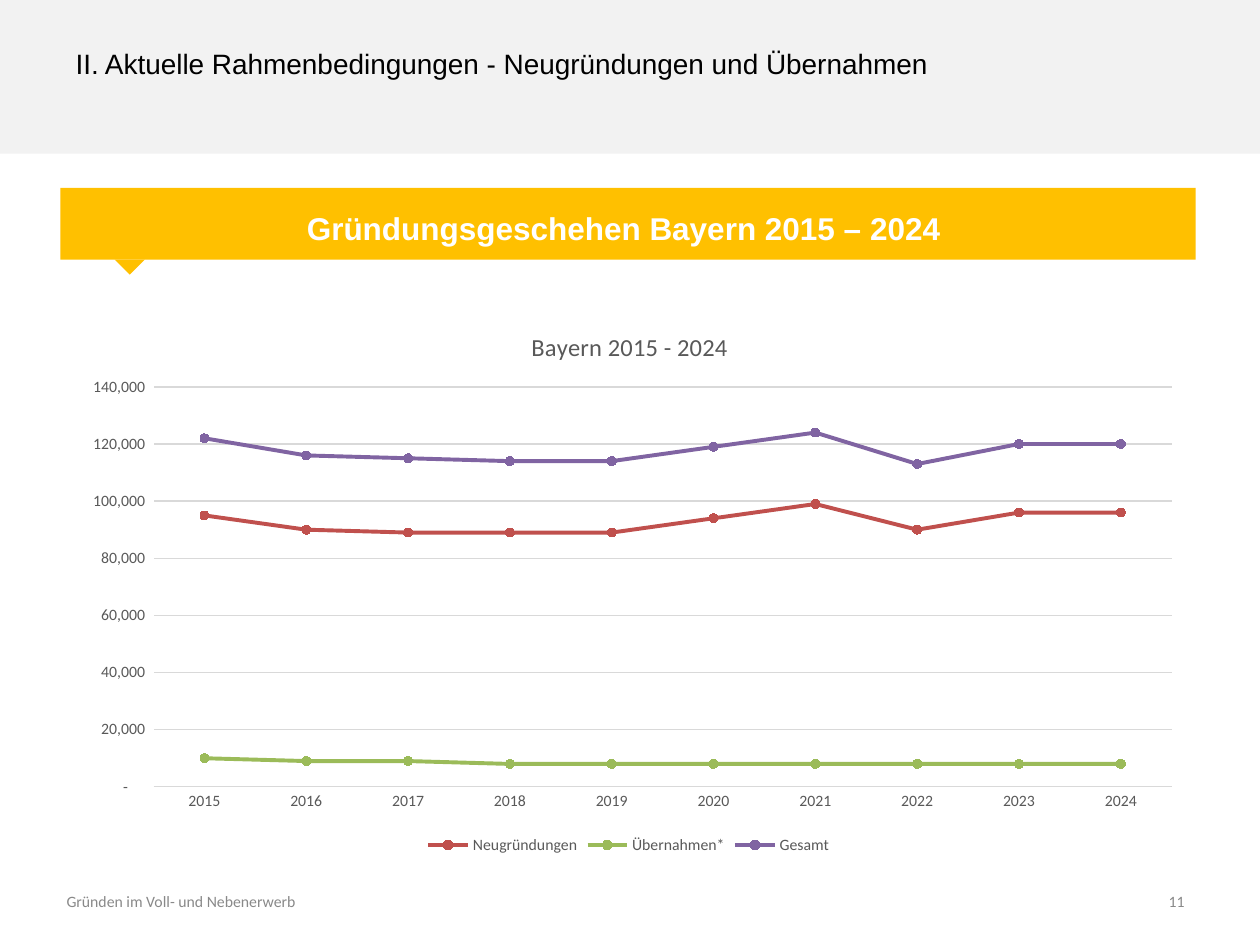
import dataclasses

import pptx
import pptx.chart.data
import pptx.dml.color
import pptx.enum.chart
import pptx.enum.shapes
import pptx.enum.text
import pptx.oxml
import pptx.oxml.ns
import pptx.util

Inches = pptx.util.Inches
Pt = pptx.util.Pt
ALIGN = pptx.enum.text.PP_ALIGN
ANCHOR = pptx.enum.text.MSO_ANCHOR
SHAPE = pptx.enum.shapes.MSO_SHAPE

COLORS = {
    "band": "F2F2F2", "gold": "FFC000", "white": "FFFFFF", "black": "000000",
    "foot": "898989", "label": "595959", "grid": "D9D9D9",
    "red": "C0504D", "green": "9BBB59", "violet": "8064A2",
}


@dataclasses.dataclass
class Box:
    left: float
    top: float
    width: float
    height: float

    def sizes(self):
        return [Inches(n) for n in dataclasses.astuple(self)]


@dataclasses.dataclass
class Line:
    name: str
    color: str
    vals: list  # in thousands


YEARS = [str(year) for year in range(2015, 2025)]
LINES = [
    Line("Neugründungen", "red", [95, 90, 89, 89, 89, 94, 99, 90, 96, 96]),
    Line("Übernahmen*", "green", [10, 9, 9, 8, 8, 8, 8, 8, 8, 8]),
    Line("Gesamt", "violet", [122, 116, 115, 114, 114, 119, 124, 113, 120, 120]),
]


def rgb(name: str):
    return pptx.dml.color.RGBColor.from_string(COLORS[name])


def place(shape, box: Box):
    shape.left, shape.top, shape.width, shape.height = box.sizes()


def style(font, size, color, face="Calibri", bold=False):
    font.size, font.name, font.bold = Pt(size), face, bold
    font.color.rgb = rgb(color)


def write(shape, text: str, *, size, color, face="Calibri", bold=False,
          align=ALIGN.LEFT, anchor=ANCHOR.TOP, spacing=1.0):
    frame = shape.text_frame
    frame.word_wrap = True
    frame.auto_size = pptx.enum.text.MSO_AUTO_SIZE.NONE
    frame.vertical_anchor = anchor
    frame.text = text
    para = frame.paragraphs[0]
    para.alignment, para.line_spacing = align, spacing
    para.space_before = Pt(0)
    style(para.runs[0].font, size, color, face, bold)
    return para


def draw(slide, kind, box: Box, color: str):
    shape = slide.shapes.add_shape(kind, *box.sizes())
    shape.shadow.inherit = False
    shape.fill.solid()
    shape.fill.fore_color.rgb = rgb(color)
    shape.line.fill.background()
    return shape


def label(slide, box: Box, text: str, **form):
    return write(slide.shapes.add_textbox(*box.sizes()), text, **form)


def layout(part, **spots):
    """Fix a chart part at fractions of the chart area."""
    old = part.find(pptx.oxml.ns.qn("c:layout"))
    if old is not None:
        part.remove(old)
    modes = {"xMode": "edge", "yMode": "edge"}
    if "w" in spots:
        modes = {"layoutTarget": "inner", **modes}
    tags = "".join(f'<c:{key} val="{val}"/>' for key, val in {**modes, **spots}.items())
    return pptx.oxml.parse_xml(
        f'<c:layout {pptx.oxml.ns.nsdecls("c")}><c:manualLayout>{tags}'
        "</c:manualLayout></c:layout>")


def plot(slide, box: Box):
    data = pptx.chart.data.CategoryChartData()
    data.categories = YEARS
    for line in LINES:
        data.add_series(line.name, [val * 1000 for val in line.vals])
    kind = pptx.enum.chart.XL_CHART_TYPE.LINE_MARKERS
    chart = slide.shapes.add_chart(kind, *box.sizes(), data).chart
    style(chart.font, 10, "black")

    # Chart title
    chart.has_title = True
    frame = chart.chart_title.text_frame
    frame.text = "Bayern 2015 - 2024"
    style(frame.paragraphs[0].runs[0].font, 14, "label")
    title = chart.chart_title._element
    spot = layout(title, x=0.41, y=0.04)
    title.find(pptx.oxml.ns.qn("c:tx")).addnext(spot)

    # Plot area and legend
    area = chart._chartSpace.chart.plotArea
    area.insert(0, layout(area, x=0.08, y=0.15, w=0.9, h=0.72))
    chart.has_legend = True
    chart.legend.position = pptx.enum.chart.XL_LEGEND_POSITION.BOTTOM
    chart.legend.include_in_layout = False
    style(chart.legend.font, 9, "label")

    # Axes
    cat, val = chart.category_axis, chart.value_axis
    for axis in (cat, val):
        axis.major_tick_mark = axis.minor_tick_mark = pptx.enum.chart.XL_TICK_MARK.NONE
        style(axis.tick_labels.font, 9, "label")
    val.minimum_scale, val.maximum_scale, val.major_unit = 0, 140000, 20000
    val.tick_labels.number_format = '_-* #,##0_-;\\-* #,##0_-;_-* "-"??_-;_-@_'
    val.tick_labels.number_format_is_linked = False
    val.format.line.fill.background()
    val.has_major_gridlines = True
    for rule in (cat.format.line, val.major_gridlines.format.line):
        rule.color.rgb, rule.width = rgb("grid"), Pt(0.75)

    # Series
    chart.plots[0].vary_by_categories = False
    for line, series in zip(LINES, chart.plots[0].series):
        tint, mark = rgb(line.color), series.marker
        series.smooth = False
        series.format.line.color.rgb, series.format.line.width = tint, Pt(2.25)
        mark.style, mark.size = pptx.enum.chart.XL_MARKER_STYLE.CIRCLE, 5
        mark.format.fill.solid()
        mark.format.fill.fore_color.rgb = tint
        mark.format.line.color.rgb = tint


def main():
    deck = pptx.Presentation()
    deck.slide_width, deck.slide_height = Inches(10), Inches(7.5)
    slide = deck.slides.add_slide(deck.slide_layouts[1])
    title, body = slide.placeholders[0], slide.placeholders[1]

    # Header band behind the title
    band = draw(slide, SHAPE.RECTANGLE, Box(0, -0.04, 10, 1.26), "band")
    title.element.addprevious(band.element)
    place(title, Box(0.5, 0.32, 7.66, 0.64))
    write(title, "II. Aktuelle Rahmenbedingungen - Neugründungen und Übernahmen",
          size=16, color="black", face="Arial")

    # Banner with pointer
    tip = draw(slide, SHAPE.ISOSCELES_TRIANGLE, Box(0.91, 2.06, 0.24, 0.12), "gold")
    tip.rotation = 180
    place(body, Box(0.48, 1.49, 9.01, 0.57))
    body.fill.solid()
    body.fill.fore_color.rgb = rgb("gold")
    para = write(body, "Gründungsgeschehen Bayern 2015 – 2024 ", size=18,
                 color="white", face="Arial", bold=True, align=ALIGN.CENTER,
                 anchor=ANCHOR.MIDDLE, spacing=1.2)
    props = para._p.get_or_add_pPr()
    props.set("marL", "0")
    props.set("indent", "0")
    props.append(pptx.oxml.parse_xml(f'<a:buNone {pptx.oxml.ns.nsdecls("a")}/>'))

    plot(slide, Box(0.5, 2.41, 8.98, 4.41))

    # Footer
    label(slide, Box(0.43, 7.03, 6.07, 0.28), "Gründen im Voll- und Nebenerwerb",
          size=9, color="foot")
    label(slide, Box(8.7, 6.95, 0.8, 0.4), "11", size=9, color="foot",
          align=ALIGN.RIGHT, anchor=ANCHOR.MIDDLE)

    deck.save("out.pptx")


if __name__ == "__main__":
    main()
